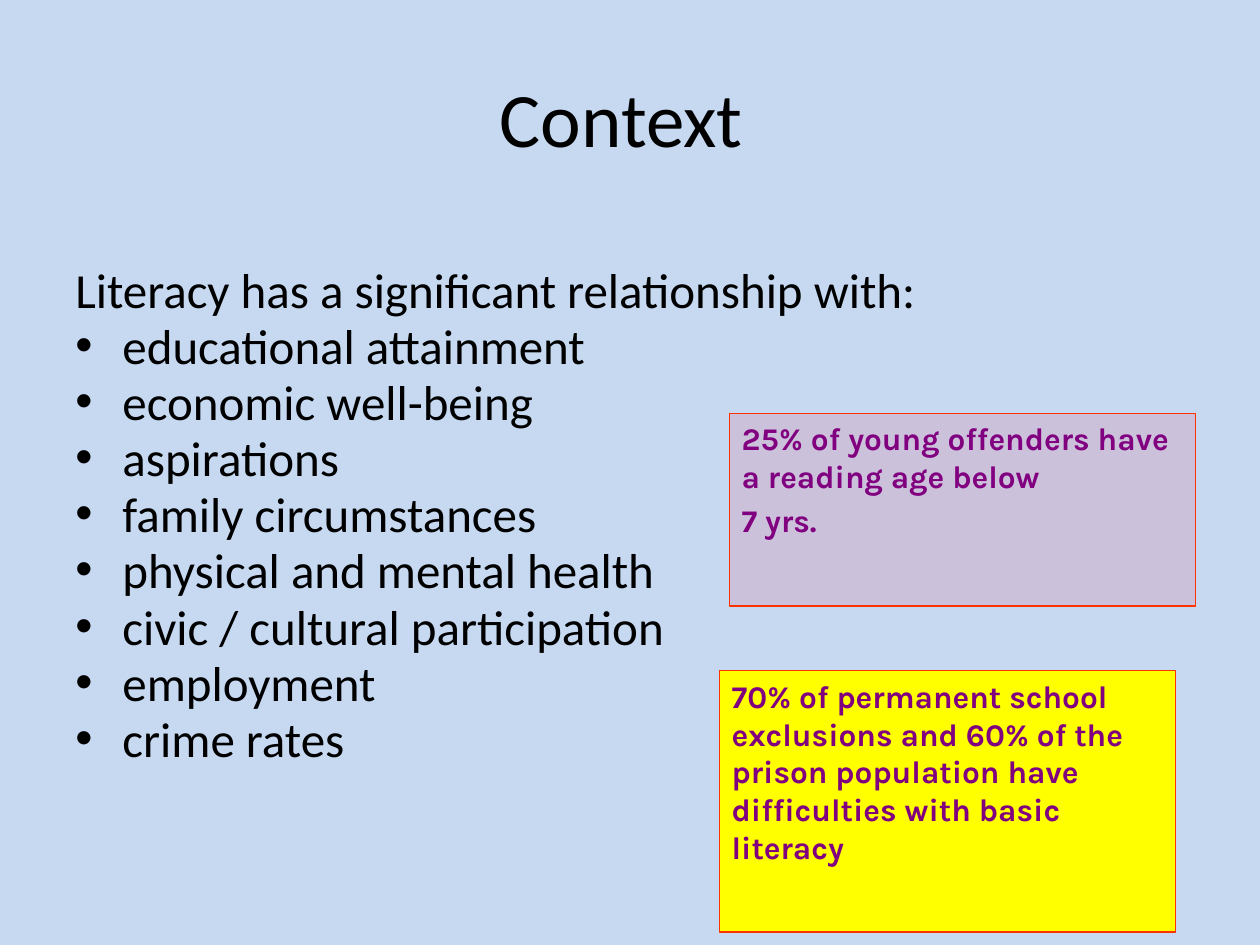
from lxml.etree import SubElement
from pptx import Presentation
from pptx.dml.color import RGBColor
from pptx.enum.shapes import MSO_SHAPE as Shape
from pptx.enum.text import MSO_ANCHOR as Anchor, PP_ALIGN as Align
from pptx.oxml.ns import qn
from pptx.util import Cm, Pt

BACKGROUND, BLACK, PURPLE, RED = "C6D9F1", "000000", "800080", "FF3300"
LILAC, YELLOW = "CCC1DA", "FFFF00"
INTRO = "Literacy has a significant relationship with:"
FACTORS = [
    "educational attainment",
    "economic well-being",
    "aspirations",
    "family circumstances",
    "physical and mental health",
    "civic / cultural participation",
    "employment",
    "crime rates",
]
OFFENDERS = ["25% of young offenders have a reading age below", "7 yrs."]
EXCLUSIONS = [
    "70% of permanent school exclusions and 60% of the prison population "
    "have difficulties with basic literacy"
]


def paint(color_holder, color):
    """Give a fill a solid colour from a hex string."""
    color_holder.solid()
    color_holder.fore_color.rgb = RGBColor.from_string(color)


def write(frame, lines, font, size, color, space=0, bold=False, align=Align.LEFT):
    """Fill a text frame with one formatted paragraph per line."""
    frame.word_wrap = True
    frame.text = "\n".join(lines)
    for para in frame.paragraphs:
        para.alignment = align
        para.space_before = Pt(space)
        for span in para.runs:
            span.font.name = font
            span.font.size = Pt(size)
            span.font.bold = bold
            paint(span.font.fill, color)


def hang(para, bullet=None):
    """Set a hanging indent, with a bullet if one is given."""
    properties = para._p.get_or_add_pPr()
    properties.set("marL", str(Cm(0.95)))
    properties.set("indent", str(-Cm(0.95)))
    if bullet:
        SubElement(properties, qn("a:buFont")).set("typeface", "Arial")
        SubElement(properties, qn("a:buChar")).set("char", bullet)
    else:
        SubElement(properties, qn("a:buNone"))


def add_title(page, text):
    """Add the centred slide title."""
    box = page.shapes.add_textbox(Cm(1.27), Cm(0.76), Cm(22.86), Cm(3.18))
    write(box.text_frame, [text], "Calibri", 44, BLACK, align=Align.CENTER)
    box.text_frame.vertical_anchor = Anchor.MIDDLE


def add_list(page, intro, items):
    """Add an introductory line followed by bulleted items."""
    box = page.shapes.add_textbox(Cm(1.27), Cm(5.33), Cm(22.86), Cm(11.68))
    write(box.text_frame, [intro, *items], "Calibri", 28, BLACK, space=5.2)
    for number, para in enumerate(box.text_frame.paragraphs):
        para.line_spacing = 0.8
        hang(para, "•" if number else None)


def add_callout(page, left, top, width, height, fill, lines):
    """Add a filled, outlined box holding a statistic."""
    box = page.shapes.add_shape(
        Shape.RECTANGLE, Cm(left), Cm(top), Cm(width), Cm(height)
    )
    box.shadow.inherit = False
    paint(box.fill, fill)
    paint(box.line.fill, RED)
    box.line.width = Pt(0.75)
    box.text_frame.vertical_anchor = Anchor.TOP
    write(box.text_frame, lines, "Karla", 18, PURPLE, space=3.5, bold=True)


def main():
    """Build the slide and save the deck."""
    deck = Presentation()
    deck.slide_width, deck.slide_height = Cm(25.4), Cm(19.05)
    page = deck.slides.add_slide(deck.slide_layouts[6])
    paint(page.background.fill, BACKGROUND)
    add_title(page, "Context ")
    add_list(page, INTRO, FACTORS)
    add_callout(page, 14.7, 8.33, 9.4, 3.89, LILAC, OFFENDERS)
    add_callout(page, 14.5, 13.52, 9.2, 5.27, YELLOW, EXCLUSIONS)
    deck.save("out.pptx")


if __name__ == "__main__":
    main()
